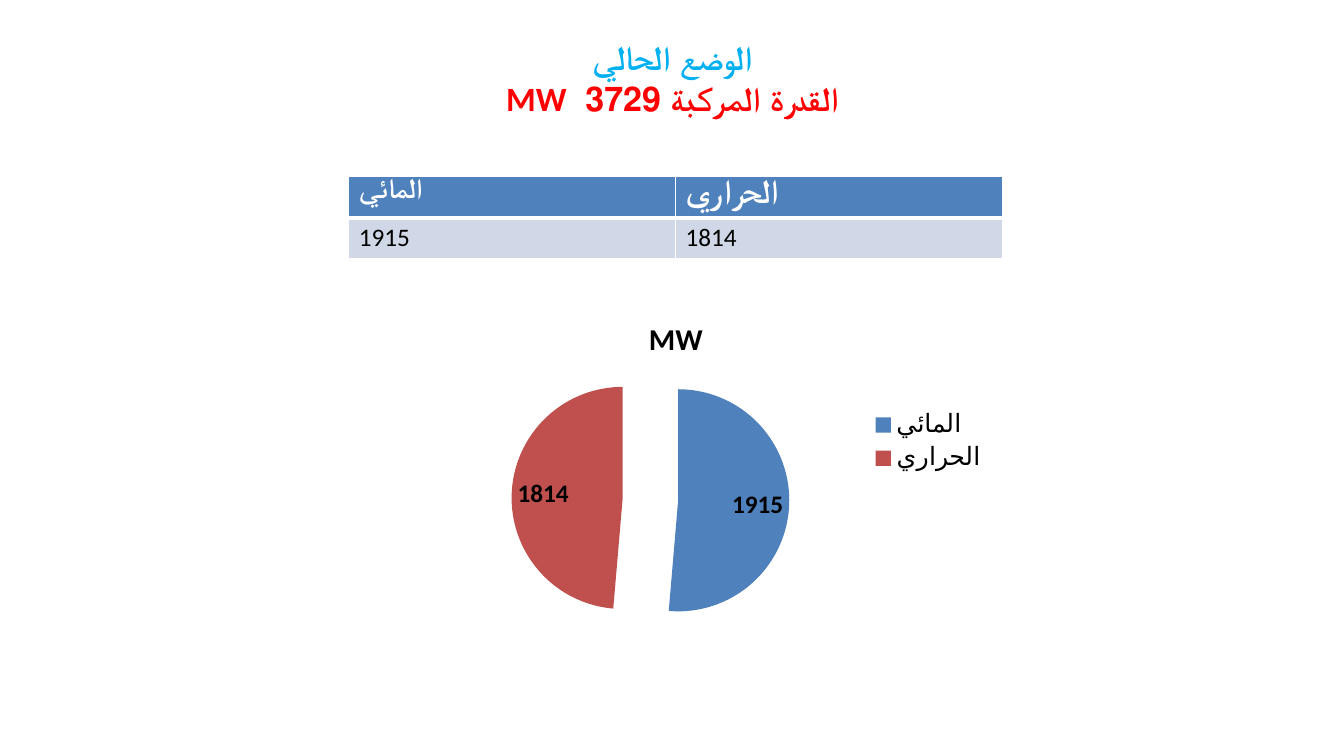
import pptx
import pptx.chart.data
import pptx.dml.color
import pptx.enum.chart
import pptx.enum.text
import pptx.oxml
import pptx.oxml.ns
import pptx.util
from dataclasses import dataclass

Inches = pptx.util.Inches
Pt = pptx.util.Pt


@dataclass(frozen=True)
class Theme:
    font: str = "Calibri"
    black: str = "000000"
    white: str = "FFFFFF"
    blue: str = "4F81BD"
    red: str = "C0504D"
    pale_blue: str = "D0D8E8"
    heading_blue: str = "00B0F0"
    heading_red: str = "FF0000"
    heading_size: float = 24.3
    chart_title_size: float = 21.6
    body_size: float = 18


def rgb(color):
    return pptx.dml.color.RGBColor.from_string(color)


def chart_layout(x, y, width, height, target=""):
    """Return a manual chart layout in fractions of the chart area."""
    return pptx.oxml.parse_xml(
        f'<c:layout {pptx.oxml.ns.nsdecls("c")}><c:manualLayout>{target}'
        '<c:xMode val="edge"/><c:yMode val="edge"/>'
        f'<c:x val="{x}"/><c:y val="{y}"/><c:w val="{width}"/><c:h val="{height}"/>'
        '</c:manualLayout></c:layout>')


class SlideBuilder:
    def __init__(self, slide, theme):
        self.slide = slide
        self.theme = theme

    def style_font(self, font, size, color, bold=False):
        font.name = self.theme.font
        font.size = Pt(size)
        font.bold = bold
        font.color.rgb = rgb(color)

    def add_heading(self, left, top, width, height, lines):
        box = self.slide.shapes.add_textbox(
            Inches(left), Inches(top), Inches(width), Inches(height))
        frame = box.text_frame
        frame.word_wrap = True
        frame.vertical_anchor = pptx.enum.text.MSO_ANCHOR.MIDDLE
        frame.text = "\n".join(text for text, color in lines)
        for paragraph, (text, color) in zip(frame.paragraphs, lines):
            paragraph.alignment = pptx.enum.text.PP_ALIGN.CENTER
            paragraph._p.get_or_add_pPr().set("rtl", "1")
            self.style_font(paragraph.font, self.theme.heading_size, color, True)

    def set_borders(self, cell, bottom_width):
        properties = cell._tc.get_or_add_tcPr()
        widths = {"lnL": 1, "lnR": 1, "lnT": 1, "lnB": bottom_width}
        for index, (side, width) in enumerate(widths.items()):
            properties.insert(index, pptx.oxml.parse_xml(
                f'<a:{side} {pptx.oxml.ns.nsdecls("a")} w="{Pt(width)}"><a:solidFill>'
                f'<a:srgbClr val="{self.theme.white}"/></a:solidFill></a:{side}>'))

    def add_table(self, left, top, column_width, row_height, values, header_sizes):
        """Draw a header row of names over one row of values."""
        theme = self.theme
        table = self.slide.shapes.add_table(
            2, len(values), Inches(left), Inches(top),
            Inches(column_width * len(values)), Inches(2 * row_height)).table
        body_sizes = [theme.body_size] * len(values)
        rows = [
            (values.keys(), header_sizes, theme.blue, theme.white, True, 0, 3),
            (values.values(), body_sizes, theme.pale_blue, theme.black, False, 0.05, 1),
        ]
        for row, (texts, sizes, fill, color, bold, margin, border) in enumerate(rows):
            for column, (text, size) in enumerate(zip(texts, sizes)):
                cell = table.cell(row, column)
                cell.text = str(text)
                cell.margin_top = cell.margin_bottom = Inches(margin)
                cell.fill.solid()
                cell.fill.fore_color.rgb = rgb(fill)
                self.set_borders(cell, border)
                self.style_font(cell.text_frame.paragraphs[0].font, size, color, bold)

    def add_pie(self, left, top, width, height, title, values, colors):
        theme = self.theme
        data = pptx.chart.data.CategoryChartData()
        data.categories = values.keys()
        data.add_series("Series 1", values.values())
        chart = self.slide.shapes.add_chart(
            pptx.enum.chart.XL_CHART_TYPE.PIE_EXPLODED, Inches(left), Inches(top),
            Inches(width), Inches(height), data).chart
        self.style_font(chart.font, theme.body_size, theme.black)

        chart.has_title = True
        chart.chart_title.text_frame.text = title
        self.style_font(chart.chart_title.text_frame.paragraphs[0].font,
                        theme.chart_title_size, theme.black, True)

        chart.has_legend = True
        chart.legend.position = pptx.enum.chart.XL_LEGEND_POSITION.RIGHT
        chart.legend.include_in_layout = False
        chart.legend._element.find(pptx.oxml.ns.qn("c:legendPos")).addnext(
            chart_layout(0.8, 0.31, 0.19, 0.22))

        plot = chart.plots[0]
        plot.vary_by_categories = True
        plot.has_data_labels = True
        labels = plot.data_labels
        labels.show_value = True
        labels.show_percentage = False
        labels.position = pptx.enum.chart.XL_LABEL_POSITION.INSIDE_END
        self.style_font(labels.font, theme.body_size, theme.black, True)
        series = plot.series[0]
        for explosion in series._element.findall(pptx.oxml.ns.qn("c:explosion")):
            explosion.set("val", "25")
        for index, color in enumerate(colors):
            fill = series.points[index].format.fill
            fill.solid()
            fill.fore_color.rgb = rgb(color)

        plot_area = chart._chartSpace.chart.plotArea
        for layout in plot_area.findall(pptx.oxml.ns.qn("c:layout")):
            plot_area.remove(layout)
        plot_area.insert(0, chart_layout(
            0.07, 0.18, 0.78, 0.82, '<c:layoutTarget val="inner"/>'))


def main():
    presentation = pptx.Presentation()
    presentation.slide_width = Inches(13.33)
    presentation.slide_height = Inches(7.5)
    theme = Theme()
    builder = SlideBuilder(
        presentation.slides.add_slide(presentation.slide_layouts[6]), theme)
    capacity = {"المائي": 1915, "الحراري": 1814}

    builder.add_heading(2.17, 0.23, 9, 1.07, [
        ("الوضع الحالي", theme.heading_blue),
        ("القدرة المركبة 3729  MW", theme.heading_red),
    ])
    builder.add_table(3.46, 1.75, 3.24, 0.41, capacity, header_sizes=[20, 24])
    builder.add_pie(3.54, 2.97, 6.33, 3.36, "MW", capacity, [theme.blue, theme.red])
    presentation.save("out.pptx")


if __name__ == "__main__":
    main()
